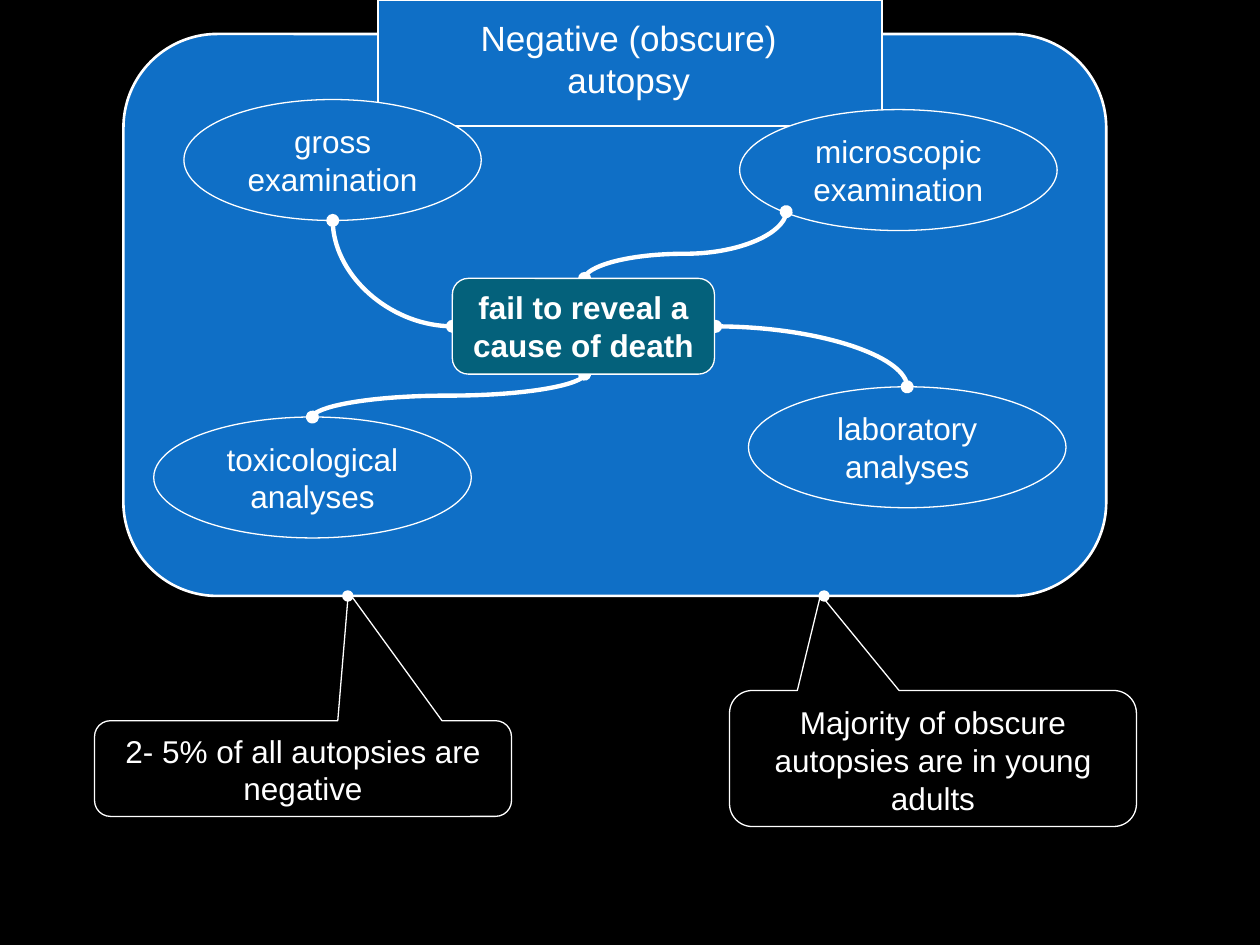
import dataclasses
import typing

import lxml.etree
import pptx
import pptx.dml.color
import pptx.enum.shapes
import pptx.enum.text
import pptx.oxml.ns
import pptx.util

Inches = pptx.util.Inches
Pt = pptx.util.Pt
RGBColor = pptx.dml.color.RGBColor
Kind = pptx.enum.shapes.MSO_SHAPE
Anchor = pptx.enum.text.MSO_ANCHOR
Align = pptx.enum.text.PP_ALIGN
qn = pptx.oxml.ns.qn
Point = tuple[float, float]

BLACK = RGBColor(0, 0, 0)
WHITE = RGBColor(255, 255, 255)
BLUE = RGBColor(0x0F, 0x6F, 0xC6)
TEAL = RGBColor(0x04, 0x61, 0x7B)

TITLE_START: Point = (2.53, 0.31)
TITLE_CURVES: list[tuple[Point, Point, Point]] = [
    ((2.52, 0.2), (4.08, 0), (4.89, 0)),
    ((5.7, 0), (7.39, 0.22), (7.4, 0.32)),
    ((7.41, 0.43), (5.78, 0.64), (4.96, 0.63)),
    ((4.15, 0.63), (2.54, 0.43), TITLE_START),
]
CURVE_STEPS = 24


@dataclasses.dataclass
class Box:
    kind: Kind
    left: float
    top: float
    width: float
    height: float
    text: str = ""
    fill: typing.Optional[RGBColor] = None
    line_width: float = 0.75
    bold: bool = False
    anchor: Anchor = Anchor.MIDDLE
    adjustments: tuple[float, ...] = ()


@dataclasses.dataclass
class Link:
    begin: Point
    end: Point
    preset: str
    leaves_vertically: bool = True
    bend: typing.Optional[float] = None


def examination(left: float, top: float, width: float, text: str) -> Box:
    return Box(Kind.FLOWCHART_CONNECTOR, left, top, width, 0.96, text, BLUE)


def callout(left: float, top: float, width: float, height: float,
            text: str, tip: Point) -> Box:
    return Box(Kind.ROUNDED_RECTANGULAR_CALLOUT, left, top, width, height, text,
               anchor=Anchor.TOP, adjustments=(*tip, 0.167))


def dot(left: float) -> Box:
    return Box(Kind.OVAL, left, 4.69, 0.08, 0.08, fill=WHITE)


PANEL = Box(Kind.ROUNDED_RECTANGLE, 0.98, 0.27, 7.8, 4.46, fill=BLUE,
            line_width=1.5, adjustments=(0.167,))
EXAMINATIONS = [
    examination(1.46, 0.79, 2.36, "gross examination"),
    examination(5.87, 0.87, 2.52, "microscopic examination"),
    examination(1.22, 3.31, 2.52, "toxicological analyses"),
    examination(5.94, 3.07, 2.52, "laboratory analyses"),
]
LINKS = [
    Link((2.64, 1.75), (3.59, 2.59), "curvedConnector2"),
    Link((2.48, 3.31), (4.64, 2.97), "curvedConnector3", bend=0.5),
    Link((4.64, 2.21), (6.24, 1.68), "curvedConnector3", bend=0.37),
    Link((5.68, 2.59), (7.2, 3.07), "curvedConnector2", leaves_vertically=False),
]
FRONT_BOXES = [
    Box(Kind.FLOWCHART_ALTERNATE_PROCESS, 3.59, 2.21, 2.08, 0.76,
        "fail to reveal a cause of death", TEAL, bold=True),
    callout(5.79, 5.48, 3.23, 1.08,
            "Majority of obscure autopsies are in young adults", (-0.276, -1.204)),
    callout(0.75, 5.72, 3.31, 0.76,
            "2- 5% of all autopsies are negative", (0.109, -1.846)),
    dot(2.72),
    dot(6.5),
]


def apply(target: typing.Any, values: dict[str, typing.Any]) -> None:
    for name, value in values.items():
        setattr(target, name, value)


def write_text(shape: typing.Any, text: str, size: float, bold: bool,
               anchor: Anchor, wrap: bool = True) -> None:
    frame = shape.text_frame
    frame.text = text
    apply(frame, {"word_wrap": wrap, "vertical_anchor": anchor,
                  "auto_size": pptx.enum.text.MSO_AUTO_SIZE.NONE})
    paragraph = frame.paragraphs[0]
    paragraph.alignment = Align.CENTER
    font = paragraph.runs[0].font
    apply(font, {"name": "Arial", "size": Pt(size), "bold": bold})
    font.color.rgb = WHITE


def paint(shape: typing.Any, fill: typing.Optional[RGBColor], line_width: float) -> None:
    shape.shadow.inherit = False
    if fill is None:
        shape.fill.background()
    else:
        shape.fill.solid()
        shape.fill.fore_color.rgb = fill
    shape.line.color.rgb = WHITE
    shape.line.width = Pt(line_width)


def draw_box(slide: typing.Any, box: Box) -> None:
    shape = slide.shapes.add_shape(box.kind, Inches(box.left), Inches(box.top),
                                   Inches(box.width), Inches(box.height))
    for index, value in enumerate(box.adjustments):
        shape.adjustments[index] = value
    paint(shape, box.fill, box.line_width)
    if box.text:
        write_text(shape, box.text, 18, box.bold, box.anchor)


def draw_link(slide: typing.Any, link: Link) -> None:
    (begin_x, begin_y), (end_x, end_y) = link.begin, link.end
    if link.leaves_vertically:
        middle_x, middle_y = (begin_x + end_x) / 2, (begin_y + end_y) / 2
        half_x, half_y = (end_x - begin_x) / 2, (end_y - begin_y) / 2
        begin_x, end_x = middle_x + half_y, middle_x - half_y
        begin_y, end_y = middle_y - half_x, middle_y + half_x
    connector = slide.shapes.add_connector(
        pptx.enum.shapes.MSO_CONNECTOR.CURVE,
        Inches(begin_x), Inches(begin_y), Inches(end_x), Inches(end_y))
    connector.rotation = 270 if link.leaves_vertically else 0
    connector.line.color.rgb = WHITE
    connector.line.width = Pt(2.5)
    properties = connector._element.spPr
    geometry = properties.find(qn("a:prstGeom"))
    geometry.set("prst", link.preset)
    if link.bend is not None:
        lxml.etree.SubElement(geometry.find(qn("a:avLst")), qn("a:gd"),
                              name="adj1", fmla=f"val {round(link.bend * 100000)}")
    outline = properties.find(qn("a:ln"))
    for end in ("a:headEnd", "a:tailEnd"):
        lxml.etree.SubElement(outline, qn(end), type="oval")
    lxml.etree.SubElement(properties, qn("a:effectLst"))


def curve_points(start: Point, curve: tuple[Point, Point, Point]) -> list[Point]:
    points = []
    for step in range(1, CURVE_STEPS + 1):
        t = step / CURVE_STEPS
        weights = ((1 - t) ** 3, 3 * t * (1 - t) ** 2, 3 * t * t * (1 - t), t ** 3)
        x, y = (sum(weight * point[axis] for weight, point in zip(weights, (start, *curve)))
                for axis in (0, 1))
        points.append((x, y))
    return points


def draw_title(slide: typing.Any) -> None:
    points = [TITLE_START]
    for curve in TITLE_CURVES:
        points += curve_points(points[-1], curve)
    builder = slide.shapes.build_freeform(*points[0], scale=Inches(1))
    builder.add_line_segments(points[1:], close=True)
    paint(builder.convert_to_shape(), BLUE, 1.5)
    title = slide.shapes.title
    apply(title, {"left": Inches(3.19), "top": Inches(0.08),
                  "width": Inches(3.6), "height": Inches(0.43)})
    write_text(title, "Negative (obscure) autopsy", 20, False, Anchor.TOP, wrap=False)
    slide.shapes._spTree.append(title._element)


def main() -> None:
    presentation = pptx.Presentation()
    apply(presentation, {"slide_width": Inches(10), "slide_height": Inches(7.5)})
    slide = presentation.slides.add_slide(presentation.slide_layouts[5])
    slide.background.fill.solid()
    slide.background.fill.fore_color.rgb = BLACK
    draw_box(slide, PANEL)
    draw_title(slide)
    for box in EXAMINATIONS:
        draw_box(slide, box)
    for link in LINKS:
        draw_link(slide, link)
    for box in FRONT_BOXES:
        draw_box(slide, box)
    presentation.save("out.pptx")


if __name__ == "__main__":
    main()
